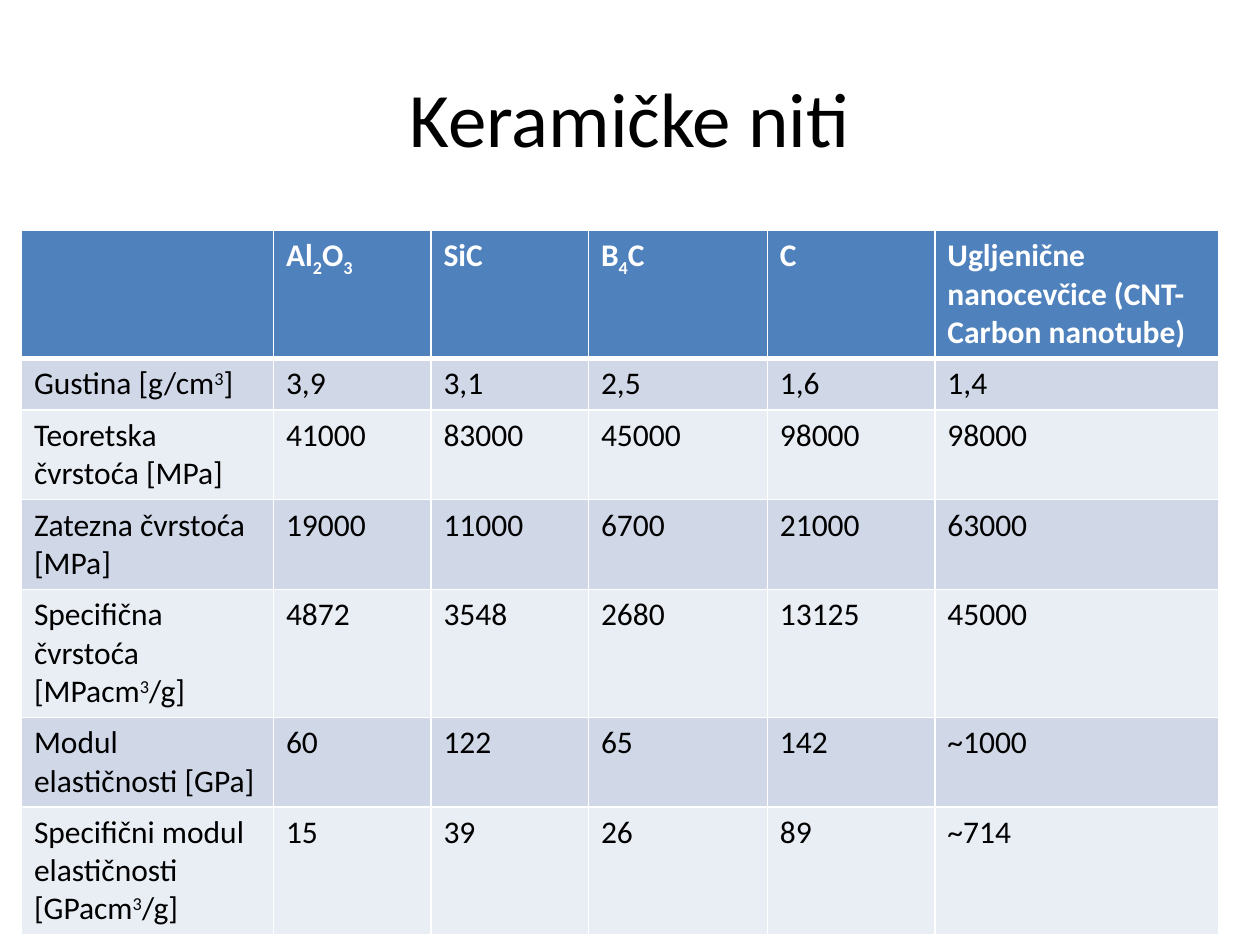
from lxml.etree import SubElement
from pptx import Presentation
from pptx.dml.color import RGBColor
from pptx.enum.text import MSO_ANCHOR, PP_ALIGN
from pptx.oxml.ns import qn
from pptx.util import Inches, Pt

FONT = "Calibri"
WHITE, BLACK = "FFFFFF", "000000"
HEADER_FILL = "4F81BD"
BAND_FILLS = ["D0D8E8", "E9EDF4"]
BASELINES = {"_": "-25000", "^": "30000"}

COLUMN_WIDTHS = [2, 1.25, 1.25, 1.42, 1.33, 2.25]
ROW_HEIGHT = 0.41
# "|" separates runs; a run led by "_" is subscript, by "^" superscript
ROWS = [
    ["", "Al|_2|O|_3", "SiC", "B|_4|C", "C",
     "Ugljenične nanocevčice (CNT-Carbon nanotube)"],
    ["Gustina [g/cm|^3|]", "3,9", "3,1", "2,5", "1,6", "1,4"],
    ["Teoretska čvrstoća [MPa]", "41000", "83000", "45000", "98000", "98000"],
    ["Zatezna čvrstoća [MPa]", "19000", "11000", "6700", "21000", "63000"],
    ["Specifična čvrstoća [MPacm|^3|/g]", "4872", "3548", "2680", "13125", "45000"],
    ["Modul elastičnosti [GPa]", "60", "122", "65", "142", "~1000"],
    ["Specifični modul elastičnosti [GPacm|^3|/g]", "15", "39", "26", "89", "~714"],
]


def rgb(color):
    return RGBColor.from_string(color)


def format_font(font, color, **values):
    font.color.rgb = rgb(color)
    for name, value in {"name": FONT, **values}.items():
        setattr(font, name, value)


def add_runs(p, text, color, **values):
    """Add the runs of a marked-up text, raising or lowering the marked ones."""
    for piece in filter(None, text.split("|")):
        baseline = BASELINES.get(piece[0])
        r = p.add_run()
        r.text = piece[1:] if baseline else piece
        format_font(r.font, color, **values)
        if baseline:
            r._r.get_or_add_rPr().set("baseline", baseline)


def set_borders(cell, top, bottom):
    tc_pr = cell._tc.get_or_add_tcPr()
    for side, width in {"L": 1, "R": 1, "T": top, "B": bottom}.items():
        ln = SubElement(tc_pr, qn(f"a:ln{side}"), w=str(Pt(width)))
        fill = SubElement(ln, qn("a:solidFill"))
        SubElement(fill, qn("a:srgbClr"), val=WHITE)


def fill_cell(cell, text, row):
    header = row == 0
    set_borders(cell, top=3 if row == 1 else 1, bottom=3 if header else 1)
    cell.fill.solid()
    cell.fill.fore_color.rgb = rgb(HEADER_FILL if header else BAND_FILLS[(row - 1) % 2])
    add_runs(cell.text_frame.paragraphs[0], text, WHITE if header else BLACK,
             size=Pt(18), bold=header)


def add_title(s, text):
    sp = s.shapes.title
    box = {"left": 0.5, "top": 0.3, "width": 9, "height": 1.25}
    for name, value in box.items():
        setattr(sp, name, Inches(value))
    tf = sp.text_frame
    tf.vertical_anchor = MSO_ANCHOR.MIDDLE
    p = tf.paragraphs[0]
    p.alignment = PP_ALIGN.CENTER
    add_runs(p, text, BLACK, size=Pt(44))


def add_fibre_table(s):
    table = s.shapes.add_table(
        len(ROWS), len(COLUMN_WIDTHS), Inches(0.17), Inches(1.83),
        Inches(sum(COLUMN_WIDTHS)), Inches(ROW_HEIGHT * len(ROWS))).table
    for column, width in zip(table.columns, COLUMN_WIDTHS):
        column.width = Inches(width)
    for i, texts in enumerate(ROWS):
        table.rows[i].height = Inches(ROW_HEIGHT)
        for j, text in enumerate(texts):
            fill_cell(table.cell(i, j), text, i)


def main():
    prs = Presentation()
    prs.slide_width, prs.slide_height = Inches(10), Inches(7.5)
    s = prs.slides.add_slide(prs.slide_layouts[5])
    add_title(s, "Keramičke niti")
    add_fibre_table(s)
    prs.save("out.pptx")


if __name__ == "__main__":
    main()
